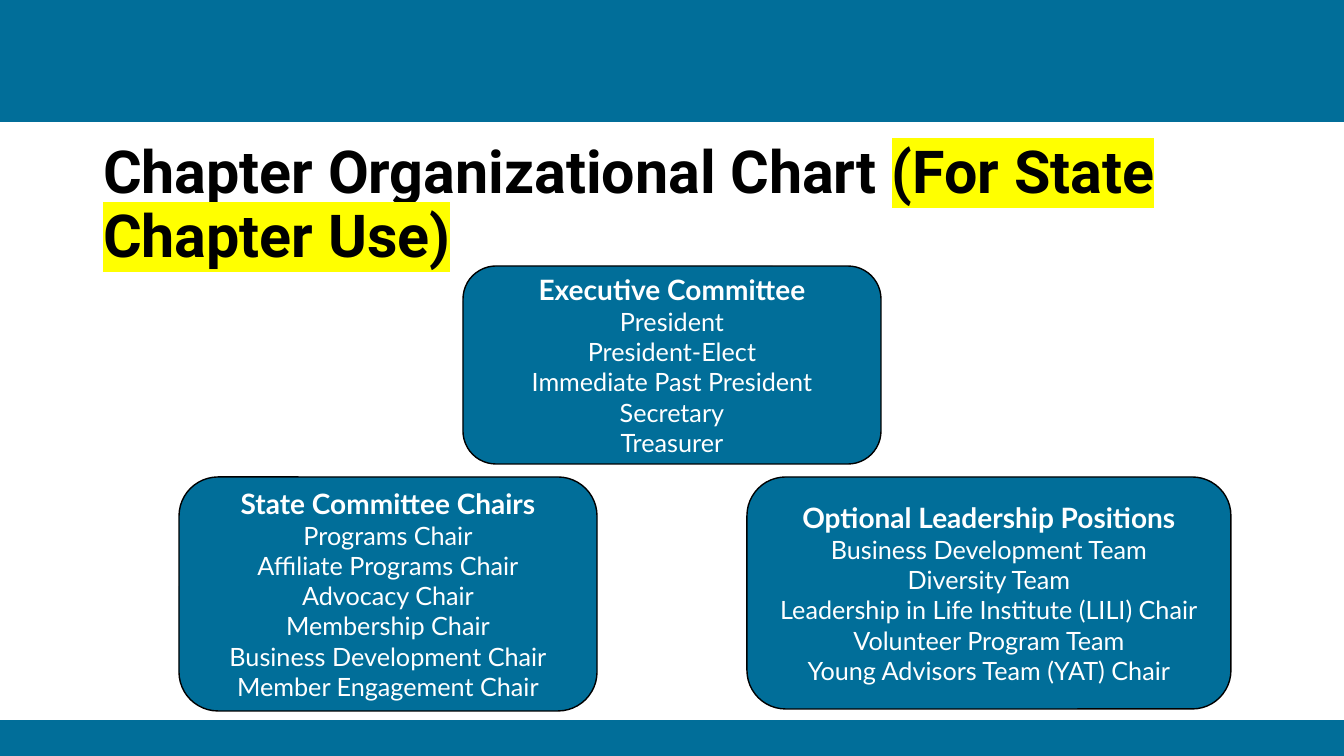
from lxml import etree
from pptx import Presentation
from pptx.dml.color import RGBColor
from pptx.enum.shapes import MSO_SHAPE
from pptx.enum.text import MSO_ANCHOR, MSO_AUTO_SIZE, PP_ALIGN
from pptx.oxml.ns import qn
from pptx.util import Emu, Pt

RECT, ROUNDED = MSO_SHAPE.RECTANGLE, MSO_SHAPE.ROUNDED_RECTANGLE
MIDDLE = MSO_ANCHOR.MIDDLE
LEFT, CENTER = PP_ALIGN.LEFT, PP_ALIGN.CENTER
NO_FIT = MSO_AUTO_SIZE.NONE
TITLE_ONLY = 5

COLORS = {"blue": "016E99", "black": "000000", "white": "FFFFFF", "yellow": "FFFF00"}
FORMATS = {
    "title": {"name": "Roboto", "size": Pt(42.3), "bold": True},
    "heading": {"name": "Lato", "size": Pt(20), "bold": True},
    "role": {"name": "Lato", "size": Pt(18), "bold": False},
}
FRAME = {"word_wrap": True, "auto_size": NO_FIT, "vertical_anchor": MIDDLE}

BANDS = [(0, 0, 1344, 122), (0, 720, 1344, 36)]
TITLE = [("Chapter Organizational Chart ", None), ("(For State Chapter Use)", "yellow")]
GROUPS = [
    ((463, 266, 418, 198), "Executive Committee",
     ["President", "President-Elect", "Immediate Past President",
      "Secretary", "Treasurer"]),
    ((179, 477, 418, 234), "State Committee Chairs",
     ["Programs Chair", "Affiliate Programs Chair", "Advocacy Chair",
      "Membership Chair", "Business Development Chair",
      "Member Engagement Chair"]),
    ((747, 477, 484, 232), "Optional Leadership Positions",
     ["Business Development Team", "Diversity Team",
      "Leadership in Life Institute (LILI) Chair",
      "Volunteer Program Team", "Young Advisors Team (YAT) Chair"]),
]


def px(n):
    return Emu(round(n * 914400 / 100.8))


def rgb(name):
    return RGBColor.from_string(COLORS[name])


def apply(target, values):
    for key, value in values.items():
        setattr(target, key, value)


class Deck:
    def __init__(self):
        self.prs = Presentation()
        apply(self.prs, {"slide_width": px(1344), "slide_height": px(756)})
        self.s = self.prs.slides.add_slide(self.prs.slide_layouts[TITLE_ONLY])

    def run(self, p, text, style, color, highlight=None):
        r = p.add_run()
        r.text = text
        apply(r.font, FORMATS[style])
        r.font.color.rgb = rgb(color)
        if highlight:
            mark = etree.Element(qn("a:highlight"))
            etree.SubElement(mark, qn("a:srgbClr"), val=COLORS[highlight])
            r.font._element.find(qn("a:solidFill")).addnext(mark)

    def title(self, box, parts):
        sp = self.s.shapes.title
        apply(sp, dict(zip(("left", "top", "width", "height"), map(px, box))))
        tf = sp.text_frame
        apply(tf, FRAME)
        p = tf.paragraphs[0]
        apply(p, {"alignment": LEFT, "line_spacing": 0.9})
        for text, highlight in parts:
            self.run(p, text, "title", "black", highlight)

    def shape(self, kind, box, line=None):
        sp = self.s.shapes.add_shape(kind, *map(px, box))
        sp.shadow.inherit = False
        sp.fill.solid()
        sp.fill.fore_color.rgb = rgb("blue")
        if line:
            sp.line.color.rgb = rgb(line)
            sp.line.width = Pt(1)
        else:
            sp.line.fill.background()
        return sp

    def group(self, box, heading, roles):
        tf = self.shape(ROUNDED, box, "black").text_frame
        apply(tf, FRAME)
        for i, text in enumerate([heading, *roles]):
            p = tf.add_paragraph() if i else tf.paragraphs[0]
            p.alignment = CENTER
            self.run(p, text, "role" if i else "heading", "white")


def main():
    deck = Deck()
    for band in BANDS:
        deck.shape(RECT, band)
    deck.title((93, 133, 1159, 146), TITLE)
    for box, heading, roles in GROUPS:
        deck.group(box, heading, roles)
    deck.prs.save("out.pptx")


if __name__ == "__main__":
    main()
